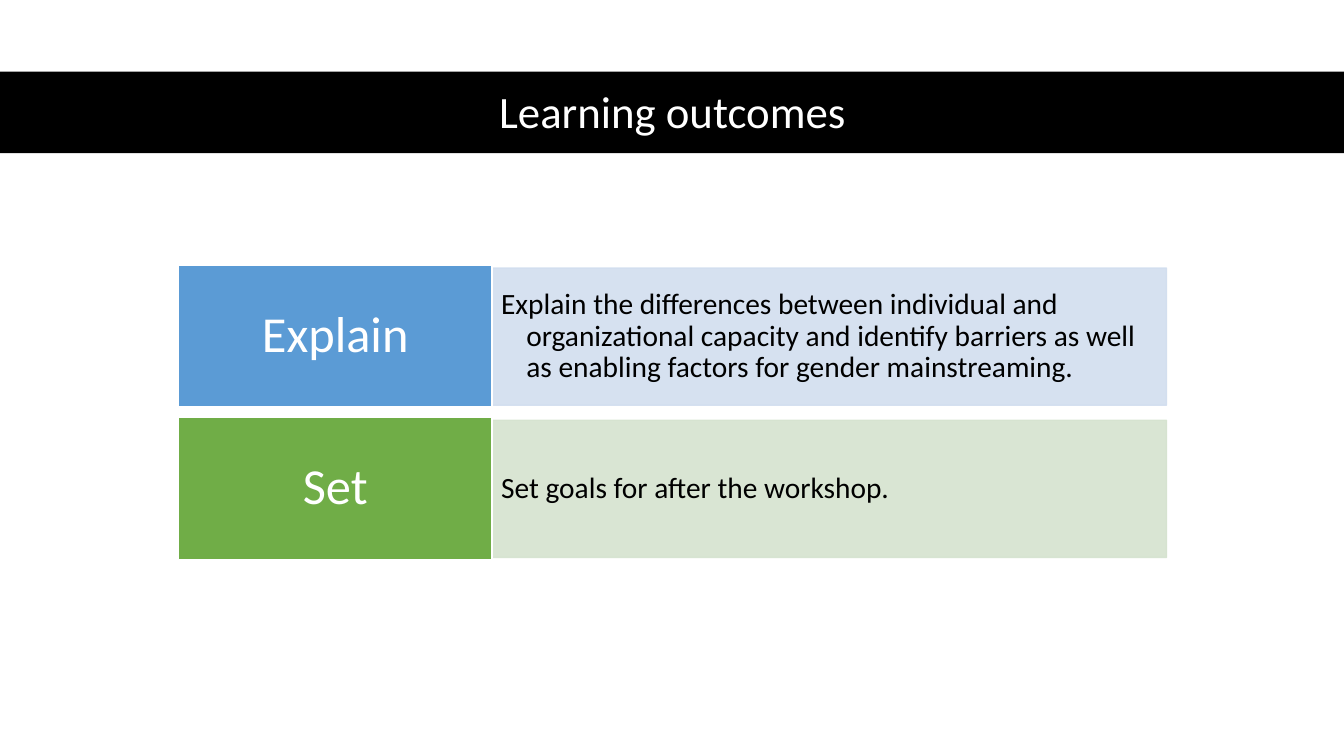
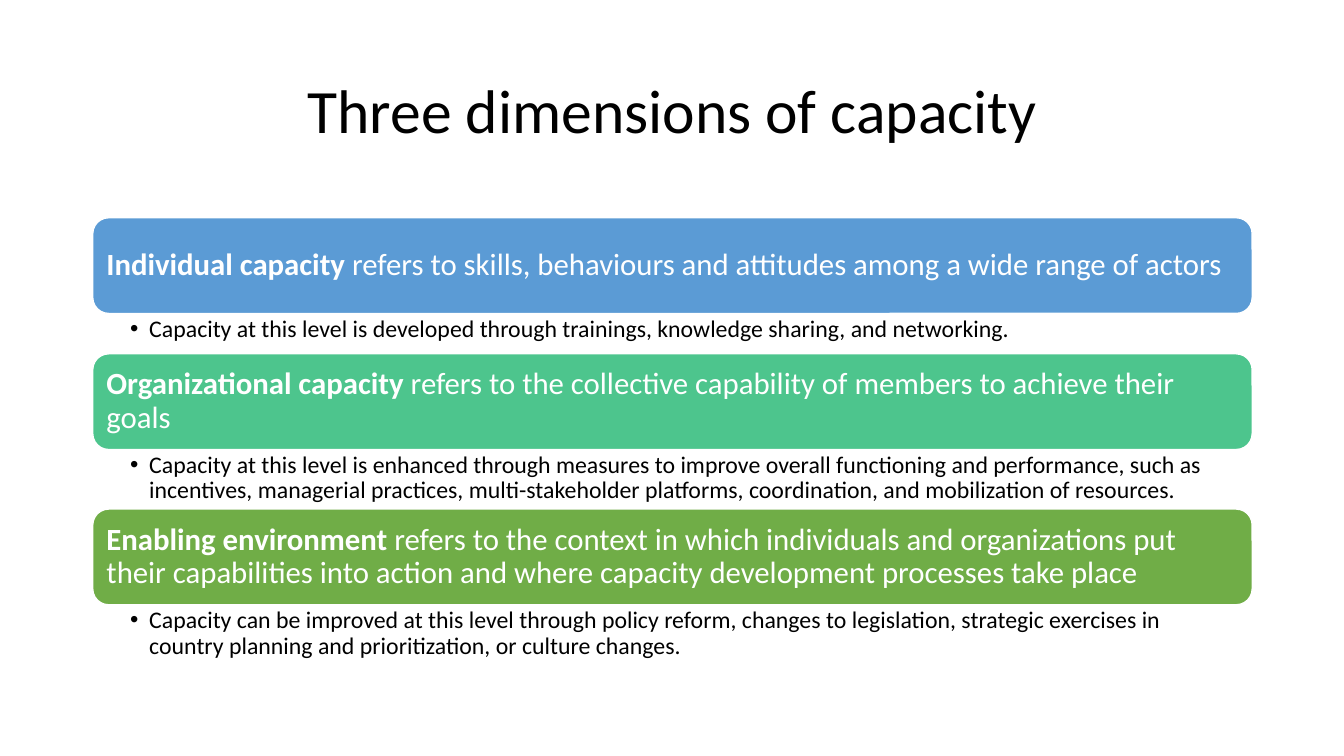
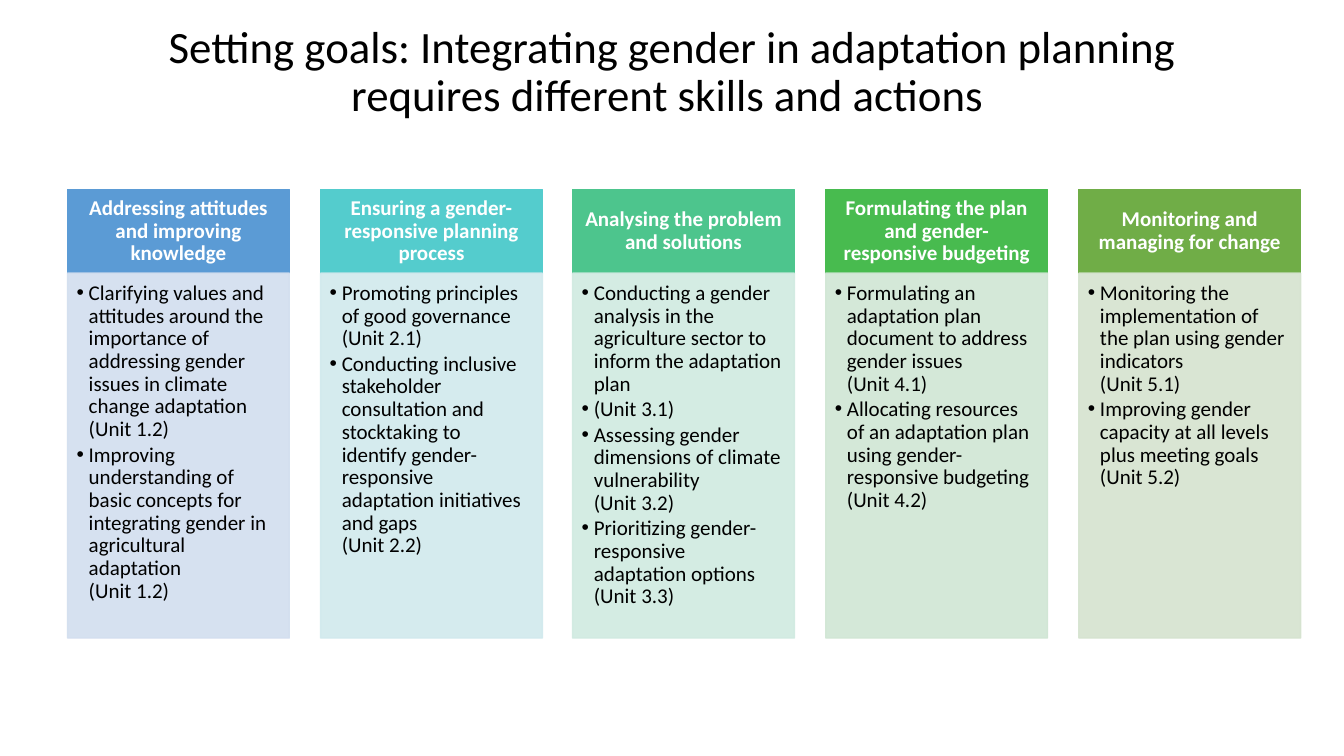
"""Build three slides on capacity for gender mainstreaming."""
from dataclasses import dataclass

import pptx
import pptx.dml.color
import pptx.enum.shapes
import pptx.enum.text
import pptx.oxml.ns
import pptx.presentation
import pptx.shapes.autoshape
import pptx.slide
import pptx.text.text
import pptx.util
from lxml import etree

RGBColor = pptx.dml.color.RGBColor
SHAPE = pptx.enum.shapes.MSO_SHAPE
ALIGN = pptx.enum.text.PP_ALIGN
ANCHOR = pptx.enum.text.MSO_ANCHOR
qn = pptx.oxml.ns.qn

EMU_PER_PX = 9144
FONT = "Calibri"
TITLE_ONLY = 5

BLACK = RGBColor(0x00, 0x00, 0x00)
WHITE = RGBColor(0xFF, 0xFF, 0xFF)
BLUE = RGBColor(0x5B, 0x9B, 0xD5)
TURQUOISE = RGBColor(0x54, 0xCC, 0xCD)
MINT = RGBColor(0x4D, 0xC5, 0x8D)
EMERALD = RGBColor(0x48, 0xBB, 0x4F)
GREEN = RGBColor(0x70, 0xAD, 0x47)
PALE_BLUE = RGBColor(0xD2, 0xDE, 0xEF)
PALE_TURQUOISE = RGBColor(0xD1, 0xE9, 0xED)
PALE_MINT = RGBColor(0xD0, 0xEA, 0xE1)
PALE_EMERALD = RGBColor(0xD0, 0xE6, 0xD4)
PALE_GREEN = RGBColor(0xD5, 0xE3, 0xCF)


@dataclass(frozen=True)
class Area:
    left: int
    top: int
    width: int
    height: int


@dataclass(frozen=True)
class Style:
    size: int
    color: RGBColor = BLACK
    bold: bool = False
    align: ALIGN = ALIGN.LEFT
    anchor: ANCHOR = ANCHOR.MIDDLE
    insets: tuple[int, int, int, int] = (10, 5, 10, 5)
    hanging: int = 0
    bullet: bool = False


@dataclass(frozen=True)
class Outcome:
    verb: str
    detail: str
    color: RGBColor
    pale: RGBColor


@dataclass(frozen=True)
class Dimension:
    name: str
    meaning: str
    note: str
    note_height: int
    color: RGBColor


@dataclass(frozen=True)
class Step:
    heading: str
    actions: tuple[str, ...]
    color: RGBColor
    pale: RGBColor


TAG = Style(36, WHITE, align=ALIGN.CENTER, insets=(15, 7, 15, 7))
DETAIL = Style(21, insets=(9, 4, 9, 4), hanging=25)
MEANING = Style(22, WHITE, insets=(9, 9, 9, 9))
NOTE = Style(17, anchor=ANCHOR.TOP, insets=(37, 3, 17, 3), hanging=19, bullet=True)
HEADING = Style(15, WHITE, bold=True, align=ALIGN.CENTER, insets=(12, 7, 12, 7))
ACTIONS = Style(15, anchor=ANCHOR.TOP, insets=(9, 9, 12, 13), hanging=12, bullet=True)

OUTCOMES = (
    Outcome(
        "Explain",
        "Explain the differences between individual and organizational capacity and identify "
        "barriers as well as enabling factors for gender mainstreaming.",
        BLUE, PALE_BLUE,
    ),
    Outcome("Set", "Set goals for after the workshop.", GREEN, PALE_GREEN),
)

DIMENSIONS = (
    Dimension(
        "Individual capacity ",
        "refers to skills, behaviours and attitudes among a wide range of actors",
        "Capacity at this level is developed through trainings, knowledge sharing, and networking.",
        40, BLUE,
    ),
    Dimension(
        "Organizational capacity ",
        "refers to the collective capability of members to achieve their goals",
        "Capacity at this level is enhanced through measures to improve overall functioning and "
        "performance, such as incentives, managerial practices, multi-stakeholder platforms, "
        "coordination, and mobilization of resources.",
        59, MINT,
    ),
    Dimension(
        "Enabling environment ",
        "refers to the context in which individuals and organizations put their capabilities "
        "into action and where capacity development processes take place",
        "Capacity can be improved at this level through policy reform, changes to legislation, "
        "strategic exercises in country planning and prioritization, or culture changes.",
        59, GREEN,
    ),
)

STEPS = (
    Step(
        "Addressing attitudes and improving knowledge",
        (
            "Clarifying values and attitudes around the importance of addressing gender issues "
            "in climate change adaptation\n(Unit 1.2)",
            "Improving understanding of basic concepts for integrating gender in agricultural "
            "adaptation\n(Unit 1.2)",
        ),
        BLUE, PALE_BLUE,
    ),
    Step(
        "Ensuring a gender-responsive planning process",
        (
            "Promoting principles of good governance\n(Unit 2.1)",
            "Conducting inclusive stakeholder consultation and stocktaking to identify "
            "gender-responsive adaptation initiatives and gaps\n(Unit 2.2)",
        ),
        TURQUOISE, PALE_TURQUOISE,
    ),
    Step(
        "Analysing the problem and solutions",
        (
            "Conducting a gender analysis in the agriculture sector to inform the adaptation plan",
            "(Unit 3.1)",
            "Assessing gender dimensions of climate vulnerability\n(Unit 3.2)",
            "Prioritizing gender-responsive adaptation options\n(Unit 3.3)",
        ),
        MINT, PALE_MINT,
    ),
    Step(
        "Formulating the plan and gender-responsive budgeting",
        (
            "Formulating an adaptation plan document to address gender issues \n(Unit 4.1)",
            "Allocating resources of an adaptation plan using gender-responsive budgeting\n(Unit 4.2)",
        ),
        EMERALD, PALE_EMERALD,
    ),
    Step(
        "Monitoring and managing for change",
        (
            "Monitoring the implementation of the plan using gender indicators\n(Unit 5.1)",
            "Improving gender capacity at all levels plus meeting goals \n(Unit 5.2)",
        ),
        GREEN, PALE_GREEN,
    ),
)


def px(length: int) -> pptx.util.Emu:
    return pptx.util.Emu(length * EMU_PER_PX)


def emu(area: Area) -> tuple[pptx.util.Emu, ...]:
    return px(area.left), px(area.top), px(area.width), px(area.height)


def format_frame(frame: pptx.text.text.TextFrame, style: Style) -> None:
    frame.word_wrap = True
    frame.auto_size = pptx.enum.text.MSO_AUTO_SIZE.NONE
    frame.vertical_anchor = style.anchor
    frame.margin_left, frame.margin_top, frame.margin_right, frame.margin_bottom = map(px, style.insets)


def add_span(para, text: str, style: Style, bold: bool = False) -> None:
    for index, line in enumerate(text.split("\n")):
        if index:
            para.add_line_break()
        span = para.add_run()
        span.text = line
        span.font.name = FONT
        span.font.size = pptx.util.Pt(style.size)
        span.font.bold = bold or style.bold
        span.font.color.rgb = style.color


def format_para(para, style: Style) -> None:
    para.alignment = style.align
    para.line_spacing = 0.9
    para.space_before = pptx.util.Pt(0)
    para.space_after = pptx.util.Pt(2)
    properties = para._p.get_or_add_pPr()
    properties.set("marL", str(px(style.hanging)))
    properties.set("indent", str(px(-style.hanging)))
    if style.bullet:
        etree.SubElement(properties, qn("a:buFont"), typeface="Arial")
        etree.SubElement(properties, qn("a:buChar"), char="•")
    else:
        etree.SubElement(properties, qn("a:buNone"))


def write(frame: pptx.text.text.TextFrame, texts: tuple[str, ...], style: Style, lead: str = "") -> None:
    format_frame(frame, style)
    for index, text in enumerate(texts):
        para = frame.add_paragraph() if index else frame.paragraphs[0]
        format_para(para, style)
        if lead:
            add_span(para, lead, style, bold=True)
        add_span(para, text, style)


def add_block(
    page: pptx.slide.Slide,
    area: Area,
    fill: RGBColor,
    line: RGBColor | None = None,
    kind: SHAPE = SHAPE.RECTANGLE,
    alpha: int = 100,
) -> pptx.shapes.autoshape.Shape:
    box = page.shapes.add_shape(kind, *emu(area))
    box.shadow.inherit = False
    box.fill.solid()
    box.fill.fore_color.rgb = fill
    if line is None:
        box.line.fill.background()
    else:
        box.line.color.rgb = line
        box.line.width = pptx.util.Pt(1)
    if alpha < 100:
        for color in list(box.element.spPr.iter(qn("a:srgbClr"))):
            etree.SubElement(color, qn("a:alpha"), val=str(alpha * 1000))
    return box


def add_page(
    deck: pptx.presentation.Presentation, title: str, area: Area, size: int, color: RGBColor = BLACK
) -> pptx.slide.Slide:
    page = deck.slides.add_slide(deck.slide_layouts[TITLE_ONLY])
    box = page.shapes.title
    box.left, box.top, box.width, box.height = emu(area)
    write(box.text_frame, (title,), Style(size, color, align=ALIGN.CENTER))
    return page


def build_outcomes(deck: pptx.presentation.Presentation) -> None:
    page = add_page(deck, "Learning outcomes", Area(92, 74, 1150, 78), 32, WHITE)
    band = add_block(page, Area(0, 71, 1333, 81), BLACK)
    page.shapes.title.element.addprevious(band.element)
    for row, outcome in enumerate(OUTCOMES):
        top = 263 + row * 151
        panel = add_block(page, Area(488, top + 3, 669, 136), outcome.pale, outcome.pale, alpha=90)
        write(panel.text_frame, (outcome.detail,), DETAIL)
        tag = add_block(page, Area(177, top, 311, 141), outcome.color, WHITE)
        write(tag.text_frame, (outcome.verb,), TAG)


def build_dimensions(deck: pptx.presentation.Presentation) -> None:
    left, top, width, height = 92, 216, 1150, 95
    page = add_page(deck, "Three dimensions of capacity", Area(left, 40, width, 145), 44)
    for dimension in DIMENSIONS:
        bar = add_block(
            page, Area(left, top, width, height), dimension.color, WHITE, SHAPE.ROUNDED_RECTANGLE
        )
        write(bar.text_frame, (dimension.meaning,), MEANING, lead=dimension.name)
        top += height
        note = page.shapes.add_textbox(*emu(Area(left, top, width, dimension.note_height)))
        write(note.text_frame, (dimension.note,), NOTE)
        top += dimension.note_height


def build_steps(deck: pptx.presentation.Presentation) -> None:
    page = add_page(
        deck,
        "Setting goals: Integrating gender in adaptation planning requires different skills and actions ",
        Area(92, 0, 1150, 145),
        32,
    )
    first, last, top, width, height = 67, 1070, 188, 220, 83
    for column, step in enumerate(STEPS):
        left = round(first + (last - first) * column / (len(STEPS) - 1))
        heading = add_block(page, Area(left, top, width, height), step.color, step.color)
        write(heading.text_frame, (step.heading,), HEADING)
        panel = add_block(page, Area(left, top + height, width, 362), step.pale, step.pale, alpha=90)
        write(panel.text_frame, step.actions, ACTIONS)


def main() -> None:
    deck = pptx.Presentation()
    deck.slide_width, deck.slide_height = px(1333), px(750)
    build_outcomes(deck)
    build_dimensions(deck)
    build_steps(deck)
    deck.save("out.pptx")


if __name__ == "__main__":
    main()
